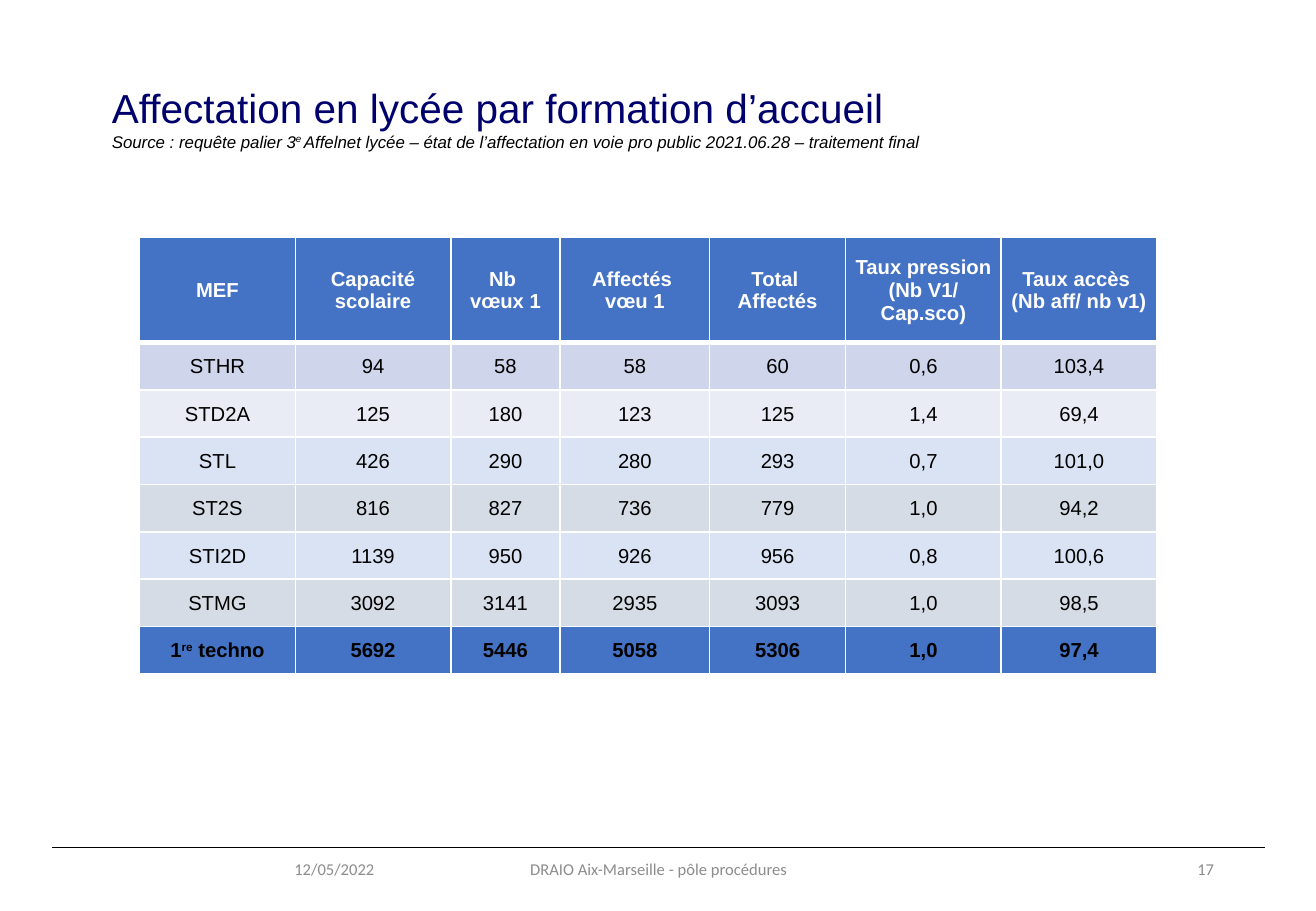
"""Builds the slide on places given per training programme, with its results table."""
import typing

import lxml.etree
import pptx
import pptx.dml.color
import pptx.enum.shapes
import pptx.enum.text
import pptx.oxml
import pptx.oxml.ns
import pptx.util

Inches = pptx.util.Inches
Align = pptx.enum.text.PP_ALIGN
Anchor = pptx.enum.text.MSO_ANCHOR

COLOURS = {
    "white": "FFFFFF", "black": "000000", "navy": "00006D", "grey": "8C8C8C",
    "blue": "4472C4", "lavender": "CFD5EA", "mist": "E9EBF5",
    "sky": "DAE3F3", "steel": "D6DCE5",
}


class Span(typing.NamedTuple):
    text: str
    raised: bool = False


class Style(typing.NamedTuple):
    size: float
    colour: str
    font: str = "Arial"
    bold: bool = False
    italic: bool = False


class TableRow(typing.NamedTuple):
    fill: str
    style: Style
    label: list[Span]
    values: str


class Footer(typing.NamedTuple):
    left: float
    width: float
    align: Align
    text: str


TITLE = Style(24, "navy")
SOURCE = Style(10, "black", italic=True)
HEADER = Style(12, "white", bold=True)
BODY = Style(12, "black")
TOTAL = Style(12, "black", bold=True)
FOOTER = Style(9.8, "grey", "Calibri")

SOURCE_SPANS = [
    Span("Source : requête palier 3"), Span("e ", raised=True),
    Span("Affelnet lycée – état de l’affectation en voie pro public 2021.06.28 – traitement final"),
]
HEADINGS = [
    ["MEF"], ["Capacité scolaire"], ["Nb ", "vœux 1"], ["Affectés ", "vœu 1"],
    ["Total ", "Affectés"], ["Taux pression (Nb V1/ Cap.sco)"],
    ["Taux accès ", "(Nb aff/ nb v1)"],
]
ROWS = [
    TableRow("lavender", BODY, [Span("STHR")], "94 58 58 60 0,6 103,4"),
    TableRow("mist", BODY, [Span("STD2A")], "125 180 123 125 1,4 69,4"),
    TableRow("sky", BODY, [Span("STL")], "426 290 280 293 0,7 101,0"),
    TableRow("steel", BODY, [Span("ST2S")], "816 827 736 779 1,0 94,2"),
    TableRow("sky", BODY, [Span("STI2D")], "1139 950 926 956 0,8 100,6"),
    TableRow("steel", BODY, [Span("STMG")], "3092 3141 2935 3093 1,0 98,5"),
    TableRow("blue", TOTAL, [Span("1"), Span("re", raised=True), Span(" techno")],
             "5692 5446 5058 5306 1,0 97,4"),
]
COLUMN_WIDTHS = [1.28, 1.28, 0.9, 1.23, 1.12, 1.28, 1.28]
ROW_HEIGHTS = [0.87] + [0.39] * len(ROWS)
FOOTERS = [
    Footer(0.74, 2.44, Align.RIGHT, "12/05/2022"),
    Footer(3.59, 3.66, Align.CENTER, "DRAIO Aix-Marseille - pôle procédures"),
    Footer(7.65, 2.44, Align.RIGHT, "17"),
]


def rgb(name: str) -> pptx.dml.color.RGBColor:
    return pptx.dml.color.RGBColor.from_string(COLOURS[name])


def add_spans(para, spans: list[Span], style: Style) -> None:
    for span in spans:
        run = para.add_run()
        run.text = span.text
        run.font.name = style.font
        run.font.size = pptx.util.Pt(style.size)
        run.font.bold = style.bold
        run.font.italic = style.italic
        run.font.color.rgb = rgb(style.colour)
        if span.raised:
            run.font._element.set("baseline", "30000")


def set_borders(cell, top: float, bottom: float) -> None:
    properties = cell._tc.get_or_add_tcPr()
    sides = {"lnL": 1, "lnR": 1, "lnT": top, "lnB": bottom}
    for position, (side, width) in enumerate(sides.items()):
        line = pptx.oxml.parse_xml(
            f'<a:{side} {pptx.oxml.ns.nsdecls("a")} w="{pptx.util.Pt(width)}"><a:solidFill>'
            f'<a:srgbClr val="{COLOURS["white"]}"/></a:solidFill></a:{side}>')
        properties.insert(position, line)


def fill_cell(cell, lines: list[list[Span]], style: Style, fill: str) -> None:
    cell.fill.solid()
    cell.fill.fore_color.rgb = rgb(fill)
    cell.vertical_anchor = Anchor.MIDDLE
    cell.margin_left = cell.margin_right = cell.margin_top = Inches(0.01)
    cell.margin_bottom = 0
    for index, spans in enumerate(lines):
        para = cell.text_frame.add_paragraph() if index else cell.text_frame.paragraphs[0]
        para.alignment = Align.CENTER
        add_spans(para, spans, style)


def add_title(page) -> None:
    box = page.shapes.title
    box.left, box.top, box.width, box.height = map(Inches, (0.92, 0.68, 8.85, 1.05))
    frame = box.text_frame
    frame.margin_left = frame.margin_right = frame.margin_top = frame.margin_bottom = 0
    frame.auto_size = pptx.enum.text.MSO_AUTO_SIZE.NONE
    frame.vertical_anchor = Anchor.TOP
    frame.word_wrap = True
    para = frame.paragraphs[0]
    para.alignment = Align.LEFT
    add_spans(para, [Span("Affectation en lycée par formation d’accueil")], TITLE)
    para.add_line_break()
    add_spans(para, SOURCE_SPANS, SOURCE)


def add_results(page) -> None:
    table = page.shapes.add_table(
        len(ROW_HEIGHTS), len(COLUMN_WIDTHS), Inches(1.15), Inches(1.95),
        Inches(sum(COLUMN_WIDTHS)), Inches(sum(ROW_HEIGHTS))).table
    table.first_row = table.horz_banding = False
    for column, width in zip(table.columns, COLUMN_WIDTHS):
        column.width = Inches(width)
    for row, height in zip(table.rows, ROW_HEIGHTS):
        row.height = Inches(height)
    for index, heading in enumerate(HEADINGS):
        cell = table.cell(0, index)
        fill_cell(cell, [[Span(line)] for line in heading], HEADER, "blue")
        set_borders(cell, 1, 3)
    for number, row in enumerate(ROWS, start=1):
        contents = [row.label] + [[Span(value)] for value in row.values.split()]
        for index, spans in enumerate(contents):
            cell = table.cell(number, index)
            fill_cell(cell, [spans], row.style, row.fill)
            set_borders(cell, 3 if number == 1 else 1, 1)


def add_rule(page) -> None:
    rule = page.shapes.add_connector(
        pptx.enum.shapes.MSO_CONNECTOR.STRAIGHT,
        Inches(0.43), Inches(6.98), Inches(10.41), Inches(6.98))
    rule.line.color.rgb = rgb("black")
    rule.line.width = pptx.util.Pt(0.8)
    lxml.etree.SubElement(rule._element.spPr, pptx.oxml.ns.qn("a:effectLst"))


def add_footer(page, footer: Footer) -> None:
    box = page.shapes.add_textbox(
        Inches(footer.left), Inches(6.95), Inches(footer.width), Inches(0.4))
    box.text_frame.word_wrap = True
    box.text_frame.vertical_anchor = Anchor.MIDDLE
    para = box.text_frame.paragraphs[0]
    para.alignment = footer.align
    add_spans(para, [Span(footer.text)], FOOTER)


def main() -> None:
    deck = pptx.Presentation()
    deck.slide_width, deck.slide_height = Inches(10.83), Inches(7.5)
    page = deck.slides.add_slide(deck.slide_layouts[5])
    add_rule(page)
    add_title(page)
    add_results(page)
    for footer in FOOTERS:
        add_footer(page, footer)
    deck.save("out.pptx")


if __name__ == "__main__":
    main()
